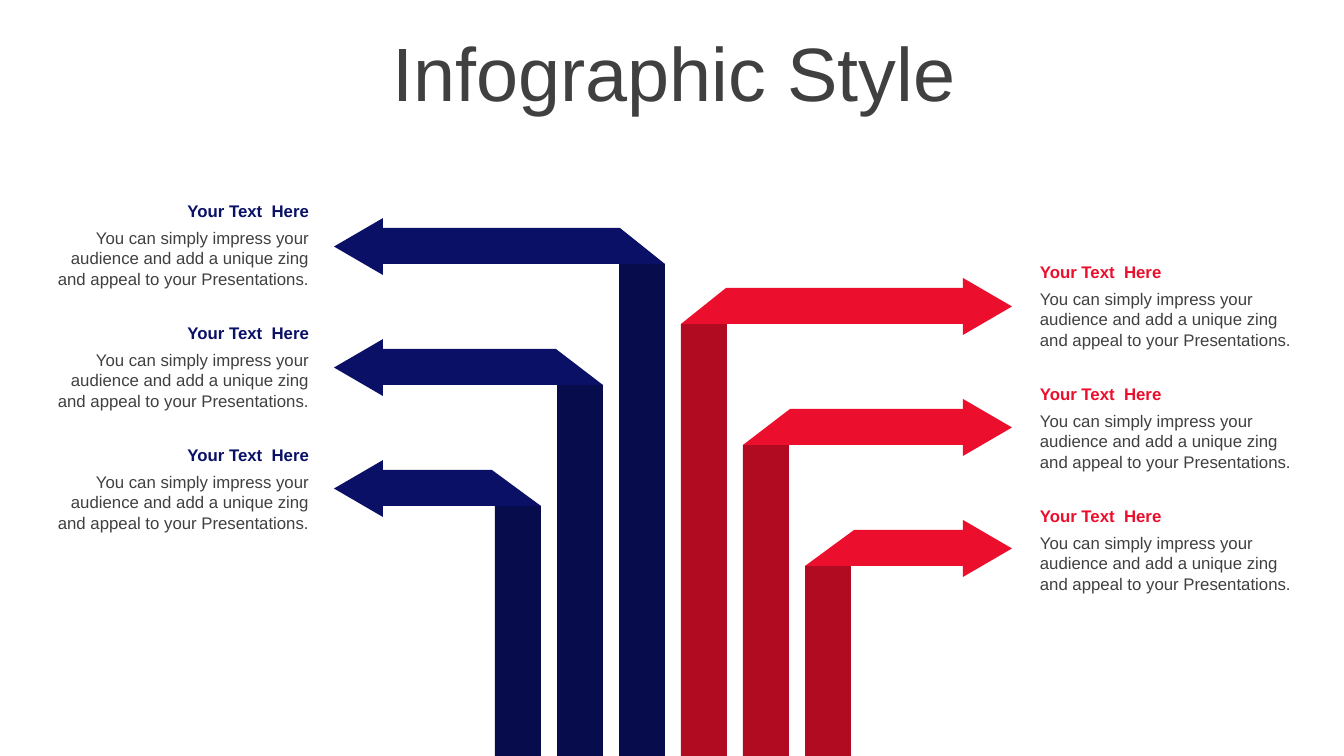
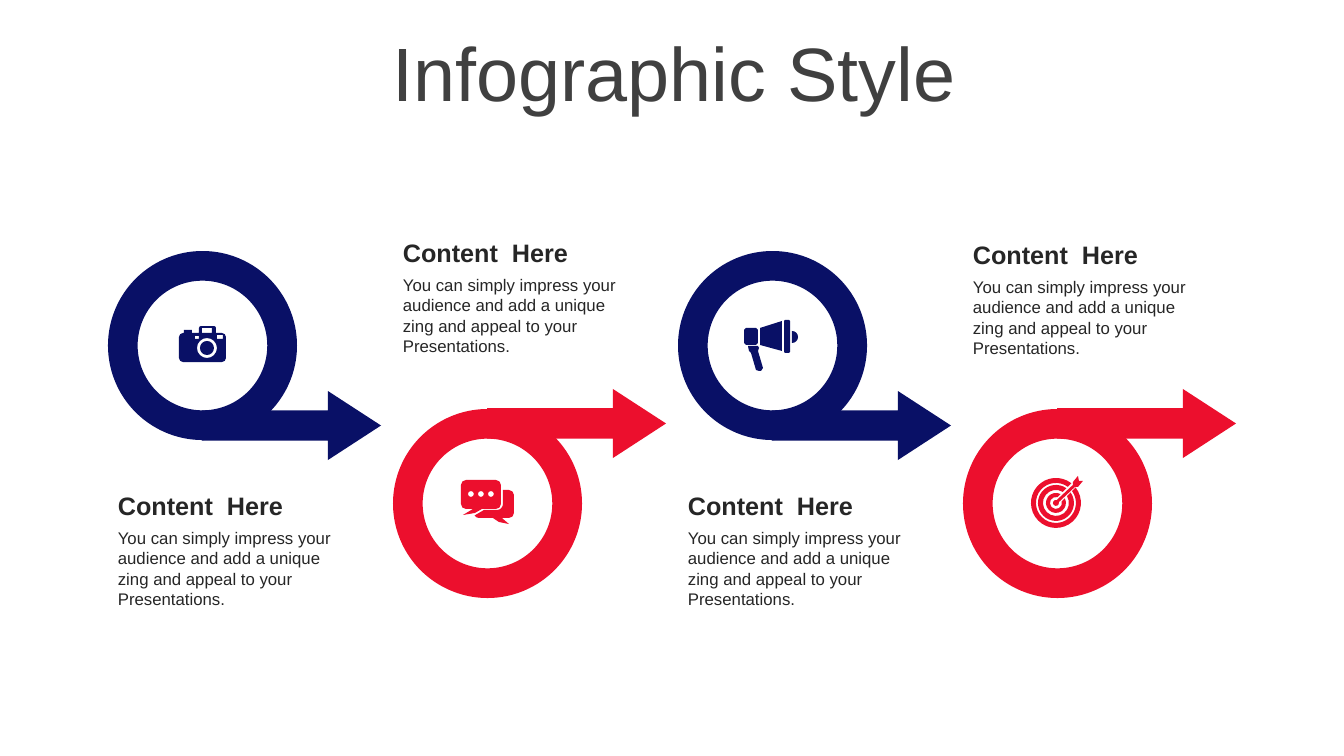
from dataclasses import dataclass
from math import asin, ceil, cos, degrees, radians, sin, tan

from lxml.etree import SubElement
from pptx import Presentation
from pptx.dml.color import RGBColor
from pptx.enum.shapes import MSO_SHAPE
from pptx.enum.text import MSO_ANCHOR, MSO_AUTO_SIZE, PP_ALIGN
from pptx.oxml.ns import qn
from pptx.util import Emu, Pt

SLIDE_WIDTH = 1344
SLIDE_HEIGHT = 756
EMU_PER_PX = 12192000 / SLIDE_WIDTH
UNITS_PER_PX = 100

NAVY = RGBColor(0x09, 0x10, 0x66)
DARK_NAVY = RGBColor(0x07, 0x0C, 0x4D)
RED = RGBColor(0xEC, 0x0F, 0x2D)
DARK_RED = RGBColor(0xB1, 0x0B, 0x22)
GRAY = RGBColor(0x40, 0x40, 0x40)
CHARCOAL = RGBColor(0x26, 0x26, 0x26)

FONT = "Arial"
TITLE = "Infographic Style"
BODY = ("You can simply impress your audience and add a unique zing "
        "and appeal to your Presentations.")

MIRROR_WIDTH = 1346
ARROW_STEP = 121
CAPTION_STEP = 122
CAPTION_WIDTH = 273
BAND_HEIGHT = 36
STEM_WIDTH = 46
HEAD_WIDTH = 49
HEAD_HEIGHT = 57
HEAD_BASE = 963
LOOP_STEP = 285

Point = tuple[float, float]
Contour = tuple[tuple[Point, ...], ...]


@dataclass(frozen=True)
class Box:
    left: int
    top: int
    width: int
    height: int


@dataclass(frozen=True)
class TextStyle:
    size: int
    color: RGBColor
    bold: bool = False
    align: PP_ALIGN = PP_ALIGN.LEFT
    anchor: MSO_ANCHOR = MSO_ANCHOR.TOP


@dataclass(frozen=True)
class Branch:
    mirrored: bool
    band_top: int
    caption_left: int
    caption_top: int
    color: RGBColor
    stem_color: RGBColor
    align: PP_ALIGN


@dataclass(frozen=True)
class Icon:
    box: Box
    contours: tuple[Contour, ...]


@dataclass(frozen=True)
class Loop:
    ring_top: int
    arrow_top: int
    heading_top: int
    color: RGBColor
    icon: Icon


def polygon(*points: Point) -> Contour:
    return tuple((point,) for point in points)


def rectangle(left: int, top: int, right: int, bottom: int) -> Contour:
    return polygon((left, top), (right, top), (right, bottom), (left, bottom))


def arc(x: int, y: int, radius: int, start: float, end: float) -> Contour:
    count = ceil(abs(end - start) / 90)
    sweep = radians(end - start) / count
    pull = 4 / 3 * tan(sweep / 4)

    def at(angle: float, bend: float = 0) -> Point:
        return (x + radius * (cos(angle) - bend * sin(angle)),
                y + radius * (sin(angle) + bend * cos(angle)))

    angles = [radians(start) + sweep * index for index in range(count + 1)]
    curves = tuple((at(first, pull), at(last, -pull), at(last))
                   for first, last in zip(angles, angles[1:]))
    return ((at(angles[0]),), *curves)


def circle(x: int, y: int, radius: int) -> Contour:
    return arc(x, y, radius, 0, 360)


def rounded(left: int, top: int, right: int, bottom: int, radius: int) -> Contour:
    return (*arc(left + radius, top + radius, radius, 180, 270),
            *arc(right - radius, top + radius, radius, 270, 360),
            *arc(right - radius, bottom - radius, radius, 0, 90),
            *arc(left + radius, bottom - radius, radius, 90, 180))


def split_ring(x: int, y: int, outer: int, inner: int) -> Contour:
    outer_cut, inner_cut = (degrees(asin(3 / radius)) for radius in (outer, inner))
    return (*arc(x, y, outer, outer_cut - 45, 315 - outer_cut),
            *arc(x, y, inner, 315 - inner_cut, inner_cut - 45))


CAMERA = Icon(Box(179, 326, 47, 36), (
    (*polygon((184, 333), (184, 330), (192, 330), (192, 333), (199, 333)),
     *arc(201, 328, 2, 180, 270), *arc(214, 328, 2, 270, 360),
     *polygon((216, 333)), *arc(222, 337, 4, 270, 360),
     *arc(222, 358, 4, 0, 90), *arc(183, 358, 4, 90, 180),
     *arc(183, 337, 4, 180, 270)),
    rectangle(202, 328, 212, 333),
    rectangle(195, 336, 199, 339),
    rectangle(217, 335, 223, 339),
    circle(207, 348, 10),
    circle(207, 348, 7),
))

CHAT = Icon(Box(461, 480, 53, 44), (
    (*polygon((503, 490)), *arc(509, 495, 5, 270, 360),
     *arc(509, 513, 5, 0, 90), *polygon((502, 518), (509, 524), (499, 522),
                                        (493, 518)),
     *arc(479, 513, 5, 90, 150), *polygon((484, 510)),
     *arc(497, 504, 6, 90, 0)),
    (*arc(466, 485, 5, 180, 270), *arc(496, 485, 5, 270, 360),
     *arc(496, 504, 5, 0, 90), *polygon((482, 509), (475, 513), (463, 515),
                                        (473, 509)),
     *arc(466, 504, 5, 90, 180)),
    *(circle(471 + 10 * dot, 494, 3) for dot in range(3)),
))

MEGAPHONE = Icon(Box(744, 320, 54, 51), (
    polygon((748, 346), (758, 346), (759, 348), (758, 351), (763, 368),
            (761, 371), (759, 371), (756, 370), (751, 353), (749, 351)),
    rounded(744, 328, 758, 345, 2),
    polygon((760, 328), (782, 321), (782, 351), (760, 345)),
    rounded(784, 320, 790, 353, 1),
    arc(792, 337, 6, -90, 90),
))

TARGET = Icon(Box(1031, 476, 52, 52), (
    *(split_ring(1056, 503, outer, inner)
      for outer, inner in ((25, 20), (18, 13), (10, 6))),
    (*polygon((1078, 476), (1079, 481), (1083, 481), (1078, 487), (1075, 487)),
     *arc(1056, 503, 3, -15, 285), *polygon((1073, 485), (1073, 482))),
))

BRANCHES = (
    Branch(False, 288, 1030, 257, RED, DARK_RED, PP_ALIGN.LEFT),
    Branch(True, 228, 46, 196, NAVY, DARK_NAVY, PP_ALIGN.RIGHT),
)
LOOPS = (
    Loop(251, 391, 485, NAVY, CAMERA),
    Loop(409, 389, 232, RED, CHAT),
    Loop(251, 391, 485, NAVY, MEGAPHONE),
    Loop(409, 389, 234, RED, TARGET),
)


def px(length: int) -> Emu:
    return Emu(round(length * EMU_PER_PX))


def draw_preset(slide, kind: MSO_SHAPE, box: Box, color: RGBColor,
                adjustments: tuple[float, ...] = (), rotation: int = 0) -> None:
    shape = slide.shapes.add_shape(
        kind, px(box.left), px(box.top), px(box.width), px(box.height))
    for index, value in enumerate(adjustments):
        shape.adjustments[index] = value
    shape.rotation = rotation
    paint(shape, color)


def paint(shape, color: RGBColor) -> None:
    shape.shadow.inherit = False
    shape.fill.solid()
    shape.fill.fore_color.rgb = color
    shape.line.fill.background()


def add_outline(slide, points: list[Point], color: RGBColor):
    start, *others = [(x * UNITS_PER_PX, y * UNITS_PER_PX) for x, y in points]
    builder = slide.shapes.build_freeform(*start, scale=EMU_PER_PX / UNITS_PER_PX)
    builder.add_line_segments(others, close=True)
    shape = builder.convert_to_shape()
    paint(shape, color)
    return shape


def draw_icon(slide, icon: Icon, color: RGBColor) -> None:
    box = icon.box
    frame = rectangle(box.left, box.top, box.left + box.width, box.top + box.height)
    shape = add_outline(slide, [corner for corner, in frame], color)
    outline = shape.element.find(".//" + qn("a:path"))
    for segment in list(outline):
        outline.remove(segment)
    for contour in icon.contours:
        for index, points in enumerate(contour):
            tag = "a:cubicBezTo" if len(points) == 3 else "a:lnTo"
            segment = SubElement(outline, qn(tag if index else "a:moveTo"))
            for x, y in points:
                SubElement(segment, qn("a:pt"),
                           x=str(round((x - box.left) * UNITS_PER_PX)),
                           y=str(round((y - box.top) * UNITS_PER_PX)))
        SubElement(outline, qn("a:close"))


def draw_text(slide, box: Box, text: str, style: TextStyle):
    frame = slide.shapes.add_textbox(
        px(box.left), px(box.top), px(box.width), px(box.height)).text_frame
    frame.word_wrap = True
    frame.vertical_anchor = style.anchor
    frame.text = text
    paragraph = frame.paragraphs[0]
    paragraph.alignment = style.align
    for run in paragraph.runs:
        run.font.name = FONT
        run.font.size = Pt(style.size)
        run.font.bold = style.bold
        run.font.color.rgb = style.color
    return frame


def draw_caption(slide, box: Box, text: str, style: TextStyle) -> None:
    draw_text(slide, box, text, style).auto_size = MSO_AUTO_SIZE.SHAPE_TO_FIT_TEXT


def add_titled_slide(deck):
    slide = deck.slides.add_slide(deck.slide_layouts[6])
    style = TextStyle(54, GRAY, align=PP_ALIGN.CENTER, anchor=MSO_ANCHOR.MIDDLE)
    paragraph = draw_text(slide, Box(36, 37, 1276, 80), TITLE, style).paragraphs[0]
    paragraph.line_spacing = 0.9
    paragraph.space_before = Pt(10)
    return slide


def draw_branch(slide, branch: Branch, level: int) -> None:
    def place(left: int, width: int = 0) -> int:
        return MIRROR_WIDTH - left - width if branch.mirrored else left

    top = branch.band_top + ARROW_STEP * level
    bottom = top + BAND_HEIGHT
    stem = 681 + 62 * level
    fold = 726 + 64 * level
    draw_preset(slide, MSO_SHAPE.RECTANGLE, Box(
        place(stem, STEM_WIDTH), bottom, STEM_WIDTH, SLIDE_HEIGHT - bottom),
        branch.stem_color)
    add_outline(slide, [(place(fold), top), (place(HEAD_BASE), top),
                        (place(HEAD_BASE), bottom), (place(stem), bottom)],
                branch.color)
    turn_shift = (HEAD_HEIGHT - HEAD_WIDTH) // 2
    draw_preset(slide, MSO_SHAPE.ISOSCELES_TRIANGLE, Box(
        place(HEAD_BASE, HEAD_WIDTH) - turn_shift, top - 10 + turn_shift,
        HEAD_HEIGHT, HEAD_WIDTH),
        branch.color, rotation=270 if branch.mirrored else 90)

    left, caption_top = branch.caption_left, branch.caption_top + CAPTION_STEP * level
    draw_caption(slide, Box(left, caption_top + 27, CAPTION_WIDTH, 72), BODY,
                 TextStyle(12, GRAY, align=branch.align))
    draw_caption(slide, Box(left, caption_top, CAPTION_WIDTH, 30), "Your Text  Here",
                 TextStyle(12, branch.color, bold=True, align=branch.align))


def draw_loop(slide, loop: Loop, position: int) -> None:
    left = 108 + LOOP_STEP * position
    draw_preset(slide, MSO_SHAPE.RIGHT_ARROW, Box(left + 94, loop.arrow_top, 179, 69),
                loop.color, (0.442, 0.769))
    draw_preset(slide, MSO_SHAPE.DONUT, Box(left, loop.ring_top, 189, 189),
                loop.color, (0.157,))
    draw_icon(slide, loop.icon, loop.color)
    draw_caption(slide, Box(left, loop.heading_top, 245, 40), "Content  Here",
                 TextStyle(18, CHARCOAL, bold=True, anchor=MSO_ANCHOR.MIDDLE))
    draw_caption(slide, Box(left, loop.heading_top + 38, 244, 92), BODY,
                 TextStyle(12, CHARCOAL))


def main() -> None:
    deck = Presentation()
    deck.slide_width, deck.slide_height = px(SLIDE_WIDTH), px(SLIDE_HEIGHT)
    branches_slide = add_titled_slide(deck)
    for branch in BRANCHES:
        for level in range(3):
            draw_branch(branches_slide, branch, level)
    loops_slide = add_titled_slide(deck)
    for position, loop in enumerate(LOOPS):
        draw_loop(loops_slide, loop, position)
    deck.save("out.pptx")


if __name__ == "__main__":
    main()
